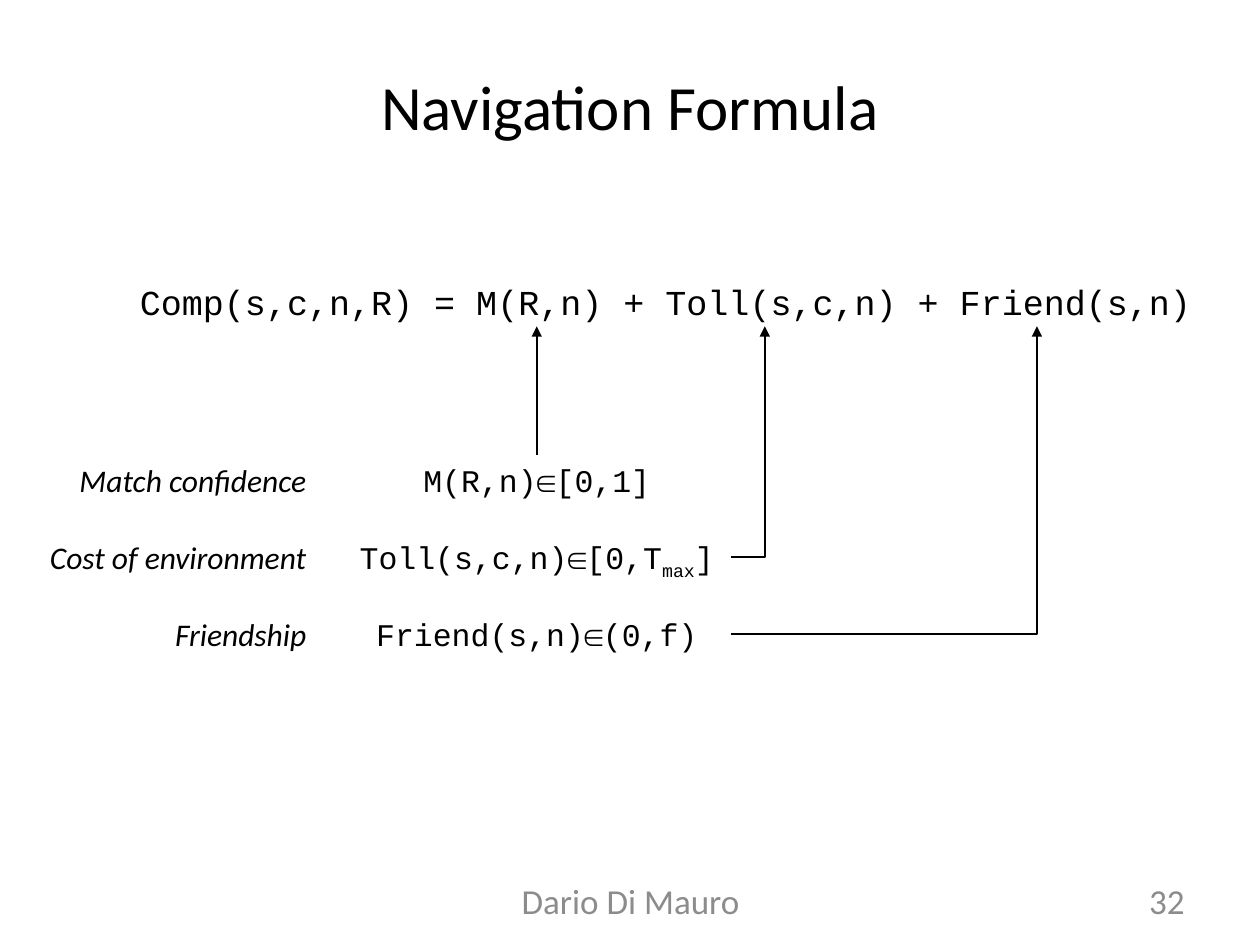
import pptx
import pptx.util
import pptx.dml.color
import pptx.enum.shapes
import pptx.enum.text
import pptx.oxml
import pptx.oxml.ns

Inches = pptx.util.Inches
Pt = pptx.util.Pt
ALIGN = pptx.enum.text.PP_ALIGN
ANCHOR = pptx.enum.text.MSO_ANCHOR
KIND = pptx.enum.shapes.MSO_CONNECTOR
qn = pptx.oxml.ns.qn

COLORS = {"ink": "000000", "muted": "8C8C8C"}
SANS, MONO = "Calibri", "Courier New"


class Deck:
    def __init__(self, slide):
        self.slide = slide

    def color(self, name):
        return pptx.dml.color.RGBColor.from_string(COLORS[name])

    def fill(self, frame, runs, size, face, align, ink="ink", italic=False):
        """Write (text, baseline) runs into the frame's first paragraph."""
        para = frame.paragraphs[0]
        para.alignment = align
        for text, base in runs:
            run = para.add_run()
            run.text = text
            font = run.font
            font.size, font.name, font.italic = Pt(size), face, italic
            font.color.rgb = self.color(ink)
            if base:
                font._element.set("baseline", str(base * 1000))

    def title(self, box, text):
        shape = self.slide.shapes.title
        shape.left, shape.top, shape.width, shape.height = map(Inches, box)
        shape.text_frame.vertical_anchor = ANCHOR.MIDDLE
        self.fill(shape.text_frame, [(text, 0)], 36, SANS, ALIGN.CENTER)

    def text(self, box, runs, size, face, align, anchor=ANCHOR.TOP,
             wrap=True, **style):
        frame = self.slide.shapes.add_textbox(*map(Inches, box)).text_frame
        frame.word_wrap = wrap
        frame.vertical_anchor = anchor
        self.fill(frame, runs, size, face, align, **style)

    def arrow(self, start, end):
        """Point from start to end, with one corner if they are not in line."""
        bent = start[0] != end[0]
        kind = KIND.ELBOW if bent else KIND.STRAIGHT
        line = self.slide.shapes.add_connector(
            kind, *map(Inches, (*start, *end)))
        line.line.color.rgb = self.color("ink")
        line.line.width = Pt(1.25)
        props = line.element.spPr
        if bent:
            props.find(qn("a:prstGeom")).set("prst", "bentConnector2")
        tip = pptx.oxml.parse_xml(
            f'<a:tailEnd {pptx.oxml.ns.nsdecls("a")} type="triangle"/>')
        props.find(qn("a:ln")).append(tip)
        props.append(pptx.oxml.parse_xml(
            f'<a:effectLst {pptx.oxml.ns.nsdecls("a")}/>'))


def main():
    prs = pptx.Presentation()
    prs.slide_width, prs.slide_height = Inches(10), Inches(7.5)
    deck = Deck(prs.slides.add_slide(prs.slide_layouts[5]))

    deck.title((0.5, 0.21, 9, 1.25), "Navigation Formula")
    for left, width, text, align in (
            (3.42, 3.17, "Dario Di Mauro", ALIGN.CENTER),
            (7.17, 2.33, "32", ALIGN.RIGHT)):
        deck.text((left, 6.95, width, 0.4), [(text, 0)], 20, SANS, align,
                  ANCHOR.MIDDLE, ink="muted")

    formula = "Comp(s,c,n,R) = M(R,n) + Toll(s,c,n) + Friend(s,n)"
    deck.text((0.43, 2.18, 9.13, 0.44), [(formula, 0)], 20, MONO, ALIGN.RIGHT)

    top, step, height = 3.61, 0.61, 0.4
    left, width = 2.72, 3.08
    tip = 2.59
    terms = (
        ("Match confidence", [("M(R,n)∈[0,1]", 0)], 4.26),
        ("Cost of environment",
         [("Toll(s,c,n)∈[0,Τ", 0), ("max", -25), ("]", 0)], 6.07),
        ("Friendship", [("Friend(s,n)∈(0,f)", 0)], 8.23),
    )
    for row, (label, runs, goal) in enumerate(terms):
        y = top + row * step
        deck.text((0.04, y, 2.49, height), [(label, 0)], 18, SANS,
                  ALIGN.RIGHT, italic=True)
        deck.text((left, y, width, height), runs, 18, MONO, ALIGN.CENTER,
                  wrap=len(runs) == 1)
        inside = goal < left + width
        start = (goal, y) if inside else (left + width, y + height / 2)
        deck.arrow(start, (goal, tip))

    prs.save("out.pptx")


if __name__ == "__main__":
    main()
